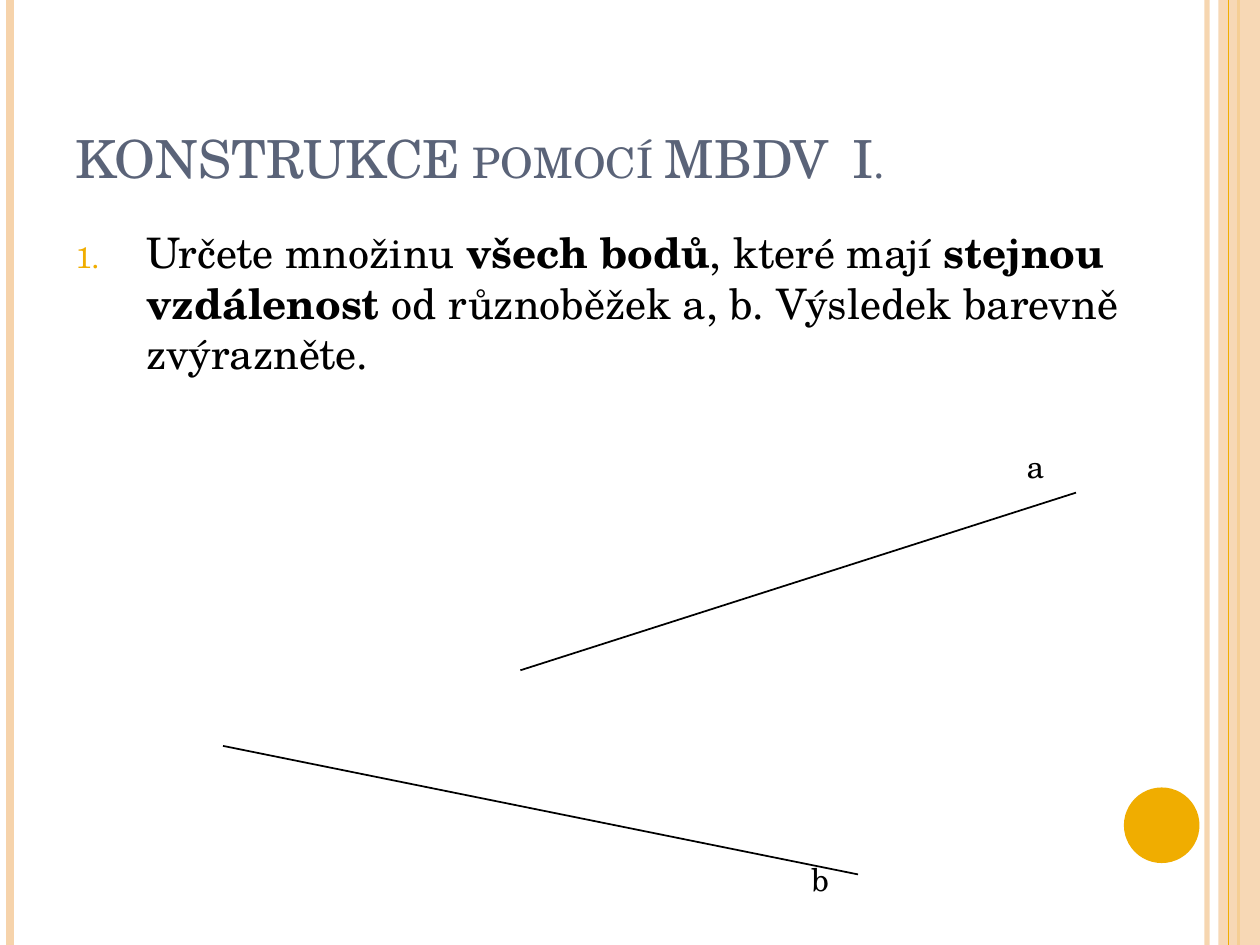
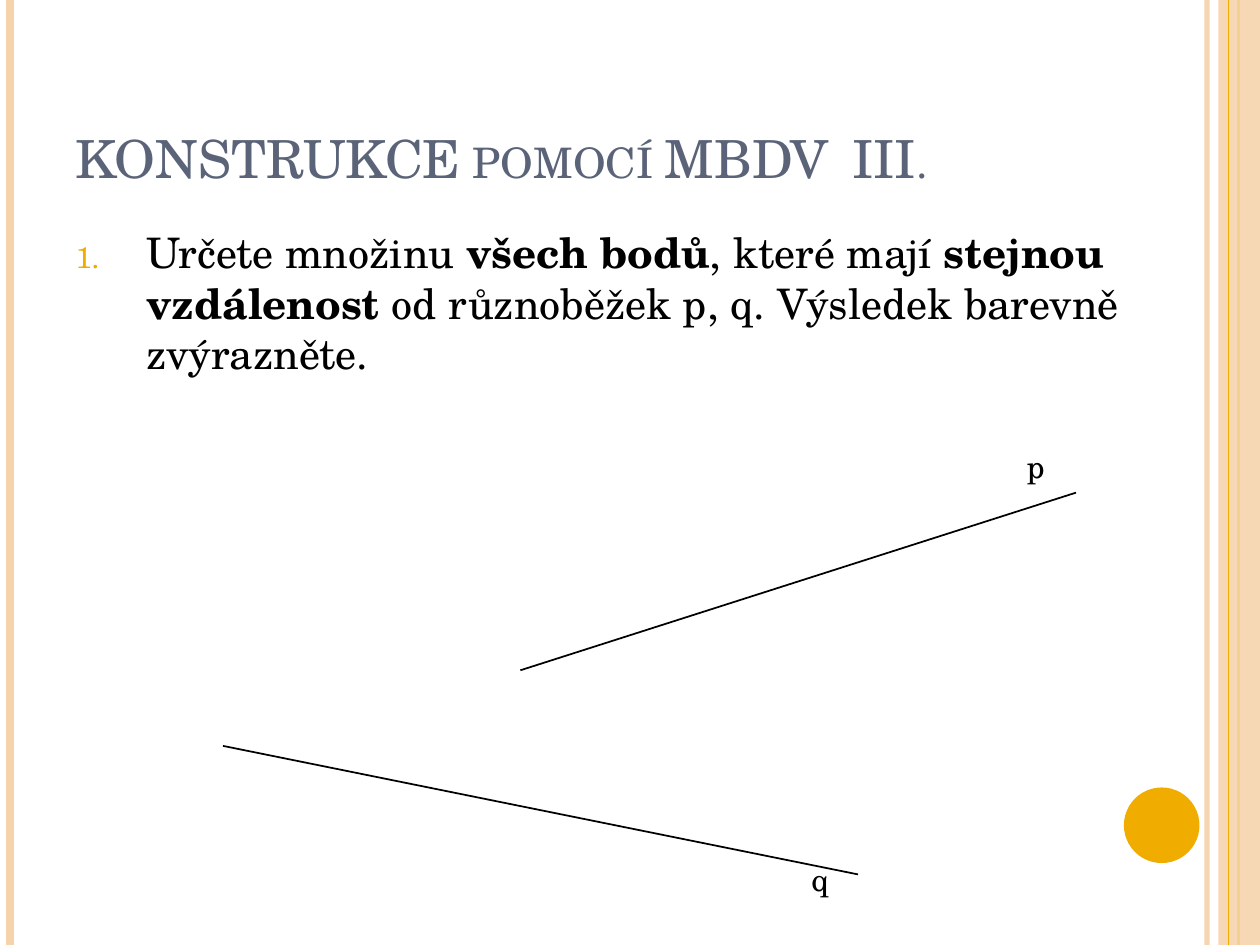
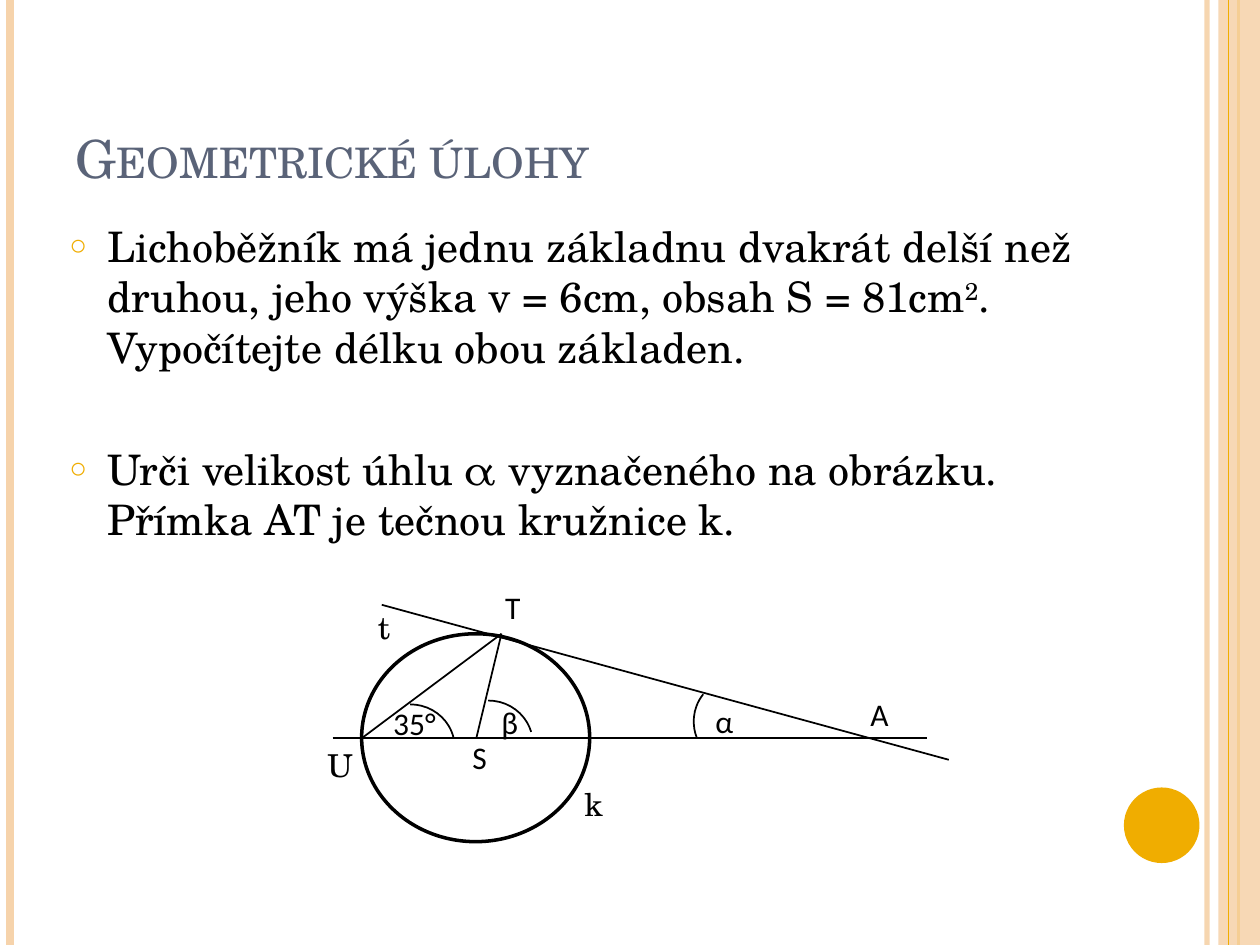
from dataclasses import dataclass
from typing import Any, NamedTuple

from lxml import etree
from pptx import Presentation
from pptx.dml.color import RGBColor
from pptx.enum import shapes as kinds, text as t
from pptx.oxml import ns
from pptx.util import Inches, Pt


@dataclass(frozen=True)
class Theme:
    ink: RGBColor = RGBColor(0, 0, 0)
    paper: RGBColor = RGBColor(0xFF, 0xFF, 0xFF)
    heading: RGBColor = RGBColor(0x5A, 0x63, 0x78)
    gold: RGBColor = RGBColor(0xF0, 0xAD, 0x00)
    peach: RGBColor = RGBColor(0xF6, 0xD3, 0xAB)
    serif: str = "TeX Gyre Schola"
    sans: str = "Calibri"
    title_size: int = 30
    body_size: int = 24
    label_size: int = 18
    bullet_percent: int = 70


THEME = Theme()


class Box(NamedTuple):
    left: float
    top: float
    width: float
    height: float

    def inches(self) -> list[Inches]:
        return [Inches(length) for length in self]


class Segment(NamedTuple):
    x1: float
    y1: float
    x2: float
    y2: float
    color: RGBColor = THEME.ink
    weight: float = 1
    opacity: int = 100


class Label(NamedTuple):
    wording: str
    box: Box
    font: str = THEME.serif
    inset: float = 0.1


class Arc(NamedTuple):
    box: Box
    start: float
    end: float
    rotation: float = 0


class Span(NamedTuple):
    wording: str
    bold: bool = False
    raised: bool = False


class Item(NamedTuple):
    spans: list[Span]
    bullet: tuple[str, dict[str, str]]
    indent: float
    space_before: float = 6


class Exercise(NamedTuple):
    title: str
    lines: tuple[str, str]


NUMBERED = ("a:buAutoNum", {"type": "arabicPeriod"})
RING = ("a:buChar", {"char": "○"})
SLIDE_HEIGHT = 7.5
TITLE_BOX = Box(0.5, 0.3, 8.17, 1.25)
EXERCISE_BODY = Box(0.5, 1.75, 9, 1.84)
PROBLEMS_BODY = Box(0.45, 1.7, 8.17, 5.33)


def edge_line(x: float, color: RGBColor, weight: float, opacity: int = 100) -> Segment:
    return Segment(x, 0, x, SLIDE_HEIGHT, color, weight, opacity)


EDGE_LINES = [
    edge_line(9.58, THEME.peach, 3, 93),
    edge_line(0.08, THEME.peach, 4.5),
    edge_line(9.83, THEME.gold, 1.5),
    edge_line(9.75, THEME.gold, 0.75),
]
EDGE_BAND = Box(9.67, 0, 0.33, SLIDE_HEIGHT)
CORNER_DOT = Box(8.92, 6.25, 0.6, 0.6)

EXERCISES = [
    Exercise("KONSTRUKCE pomocí MBDV  I.", ("a", "b")),
    Exercise("KONSTRUKCE pomocí MBDV  III.", ("p", "q")),
]
CROSSING_LINES = [Segment(4.13, 5.32, 8.54, 3.91), Segment(1.77, 5.92, 6.81, 6.94)]
LINE_LABEL_BOXES = [Box(8.05, 3.5, 0.39, 0.4), Box(6.34, 6.78, 0.39, 0.4)]

PROBLEMS = [
    Item([Span("Lichoběžník má jednu základnu dvakrát delší než druhou, "
               "jeho výška v = 6cm, obsah S = 81cm"),
          Span("2", raised=True),
          Span(". Vypočítejte délku obou základen.")], RING, 0.3),
    Item([Span("Urči velikost úhlu α vyznačeného na obrázku. "
               "Přímka AT je tečnou kružnice k.")], RING, 0.3, 41),
]
CIRCLE_K = Box(2.87, 5.03, 1.81, 1.65)
POINT_T = (3.98, 5.03)
POINT_U = (2.87, 5.86)
POINT_S = (3.78, 5.86)
FIGURE_LINES = [
    Segment(2.64, 5.86, 7.36, 5.86),
    Segment(3.03, 4.8, 7.53, 6.03),
    Segment(*POINT_U, *POINT_T),
    Segment(*POINT_S, *POINT_T),
]
ANGLE_ARCS = [
    Arc(Box(3.52, 5.56, 0.71, 0.69), 162, 206.55),
    Arc(Box(2.9, 5.59, 0.71, 0.69), 162, 208.58),
    Arc(Box(5.5, 5.39, 0.71, 0.69), 173.35, 208.84, 231.4),
]


def point_label(wording: str, left: float, top: float, font: str = THEME.sans) -> Label:
    return Label(wording, Box(left, top, 0.28, 0.41), font)


FIGURE_LABELS = [
    point_label("α", 5.58, 5.52),
    Label("35°", Box(3.12, 5.59, 0.41, 0.3), THEME.sans, 0),
    point_label("β", 3.88, 5.53),
    point_label("T", 3.91, 4.62),
    point_label("A", 6.81, 5.47),
    point_label("U", 2.5, 5.87, THEME.serif),
    point_label("S", 3.65, 5.81),
    point_label("t", 2.9, 4.78, THEME.serif),
    point_label("k", 4.54, 6.18, THEME.serif),
]


def set_all(target: Any, values: dict[str, Any]) -> None:
    for name, value in values.items():
        setattr(target, name, value)


def place(shape: Any, box: Box) -> None:
    set_all(shape, dict(zip(("left", "top", "width", "height"), box.inches())))


def add_xml(parent: Any, tag: str, **attributes: str) -> Any:
    return etree.SubElement(parent, ns.qn(tag), attributes)


def set_opacity(shape: Any, percent: int) -> None:
    if percent < 100:
        for color in shape.element.xpath("./p:spPr//a:srgbClr"):
            add_xml(color, "a:alpha", val=str(percent * 1000))


def add_run(paragraph: Any, wording: str, size: int, color: RGBColor,
            font: str = THEME.serif, bold: bool = False) -> Any:
    run = paragraph.add_run()
    run.text = wording
    set_all(run.font, {"name": font, "size": Pt(size), "bold": bold})
    run.font.color.rgb = color
    return run


def draw_line(shapes: Any, segment: Segment) -> Any:
    ends = [Inches(value) for value in segment[:4]]
    line = shapes.add_connector(kinds.MSO_CONNECTOR.STRAIGHT, *ends)
    line.line.color.rgb = segment.color
    line.line.width = Pt(segment.weight)
    set_opacity(line, segment.opacity)
    add_xml(line.element.spPr, "a:effectLst")
    return line


def draw_shape(shapes: Any, kind: Any, box: Box, fill: RGBColor | None = None,
               outline: float = 0) -> Any:
    shape = shapes.add_shape(kind, *box.inches())
    shape.shadow.inherit = False
    if fill is None:
        shape.fill.background()
    else:
        shape.fill.solid()
        shape.fill.fore_color.rgb = fill
    if outline:
        shape.line.color.rgb = THEME.ink
        shape.line.width = Pt(outline)
    else:
        shape.line.fill.background()
    return shape


def draw_arc(shapes: Any, arc: Arc) -> None:
    shape = draw_shape(shapes, kinds.MSO_SHAPE.ARC, arc.box, outline=1)
    shape.adjustments[0] = arc.start
    shape.adjustments[1] = arc.end
    shape.rotation = arc.rotation


def draw_label(shapes: Any, label: Label) -> None:
    frame = shapes.add_textbox(*label.box.inches()).text_frame
    set_all(frame, {"word_wrap": True, "auto_size": t.MSO_AUTO_SIZE.SHAPE_TO_FIT_TEXT})
    side, upright = Inches(label.inset), Inches(label.inset / 2)
    set_all(frame, {"margin_left": side, "margin_right": side,
                    "margin_top": upright, "margin_bottom": upright})
    add_run(frame.paragraphs[0], label.wording, THEME.label_size, THEME.ink, label.font)


def write_title(slide: Any, wording: str) -> None:
    frame = slide.shapes.title.text_frame
    set_all(frame, {"vertical_anchor": t.MSO_ANCHOR.BOTTOM,
                    "auto_size": t.MSO_AUTO_SIZE.NONE})
    paragraph = frame.paragraphs[0]
    paragraph.alignment = t.PP_ALIGN.LEFT
    run = add_run(paragraph, wording, THEME.title_size, THEME.heading)
    run.font._element.set("cap", "small")


def write_item(paragraph: Any, item: Item) -> None:
    paragraph.space_before = Pt(item.space_before)
    props = paragraph._p.get_or_add_pPr()
    indent = Inches(item.indent)
    props.set("marL", str(indent))
    props.set("indent", str(-indent))
    add_xml(add_xml(props, "a:buClr"), "a:srgbClr", val=str(THEME.gold))
    add_xml(props, "a:buSzPct", val=str(THEME.bullet_percent * 1000))
    tag, attributes = item.bullet
    add_xml(props, tag, **attributes)
    for span in item.spans:
        run = add_run(paragraph, span.wording, THEME.body_size, THEME.ink, bold=span.bold)
        if span.raised:
            run.font._element.set("baseline", "30000")


def write_body(slide: Any, box: Box, items: list[Item]) -> None:
    body = slide.placeholders[1]
    place(body, box)
    frame = body.text_frame
    frame.auto_size = t.MSO_AUTO_SIZE.NONE
    for index, item in enumerate(items):
        write_item(frame.add_paragraph() if index else frame.paragraphs[0], item)


def add_slide(prs: Any, title: str, body_box: Box, items: list[Item]) -> Any:
    slide = prs.slides.add_slide(prs.slide_layouts[1])
    write_title(slide, title)
    write_body(slide, body_box, items)
    return slide


def decorate_master(prs: Any, slide: Any) -> None:
    """Draw the edge decoration on a slide, then move it to the master."""
    decoration = [draw_line(slide.shapes, line) for line in EDGE_LINES]
    band = draw_shape(slide.shapes, kinds.MSO_SHAPE.RECTANGLE, EDGE_BAND, THEME.peach)
    set_opacity(band, 87)
    decoration.insert(3, band)
    decoration.append(
        draw_shape(slide.shapes, kinds.MSO_SHAPE.OVAL, CORNER_DOT, THEME.gold))
    for shape_id, part in enumerate(decoration, start=101):
        part.element.xpath(".//p:cNvPr")[0].set("id", str(shape_id))
        prs.slide_master.shapes.element.append(part.element)


def add_exercise(prs: Any, exercise: Exercise) -> Any:
    first, second = exercise.lines
    task = Item([
        Span("Určete množinu "), Span("všech bodů", bold=True),
        Span(", které mají "), Span("stejnou vzdálenost ", bold=True),
        Span(f"od různoběžek {first}, {second}. Výsledek barevně zvýrazněte."),
    ], NUMBERED, 0.56)
    slide = add_slide(prs, exercise.title, EXERCISE_BODY, [task])
    for segment in CROSSING_LINES:
        draw_line(slide.shapes, segment)
    for wording, box in zip(exercise.lines, LINE_LABEL_BOXES):
        draw_label(slide.shapes, Label(wording, box))
    return slide


def add_problems(prs: Any) -> None:
    slide = add_slide(prs, "Geometrické úlohy", PROBLEMS_BODY, PROBLEMS)
    figure = slide.shapes.add_group_shape().shapes
    draw_shape(figure, kinds.MSO_SHAPE.OVAL, CIRCLE_K, THEME.paper, outline=2)
    for segment in FIGURE_LINES:
        draw_line(figure, segment)
    for arc in ANGLE_ARCS:
        draw_arc(figure, arc)
    for label in FIGURE_LABELS:
        draw_label(figure, label)


def main() -> None:
    prs = Presentation()
    set_all(prs, {"slide_width": Inches(10), "slide_height": Inches(SLIDE_HEIGHT)})
    place(prs.slide_layouts[1].placeholders[0], TITLE_BOX)
    exercise_slides = [add_exercise(prs, exercise) for exercise in EXERCISES]
    decorate_master(prs, exercise_slides[0])
    add_problems(prs)
    prs.save("out.pptx")


if __name__ == "__main__":
    main()
